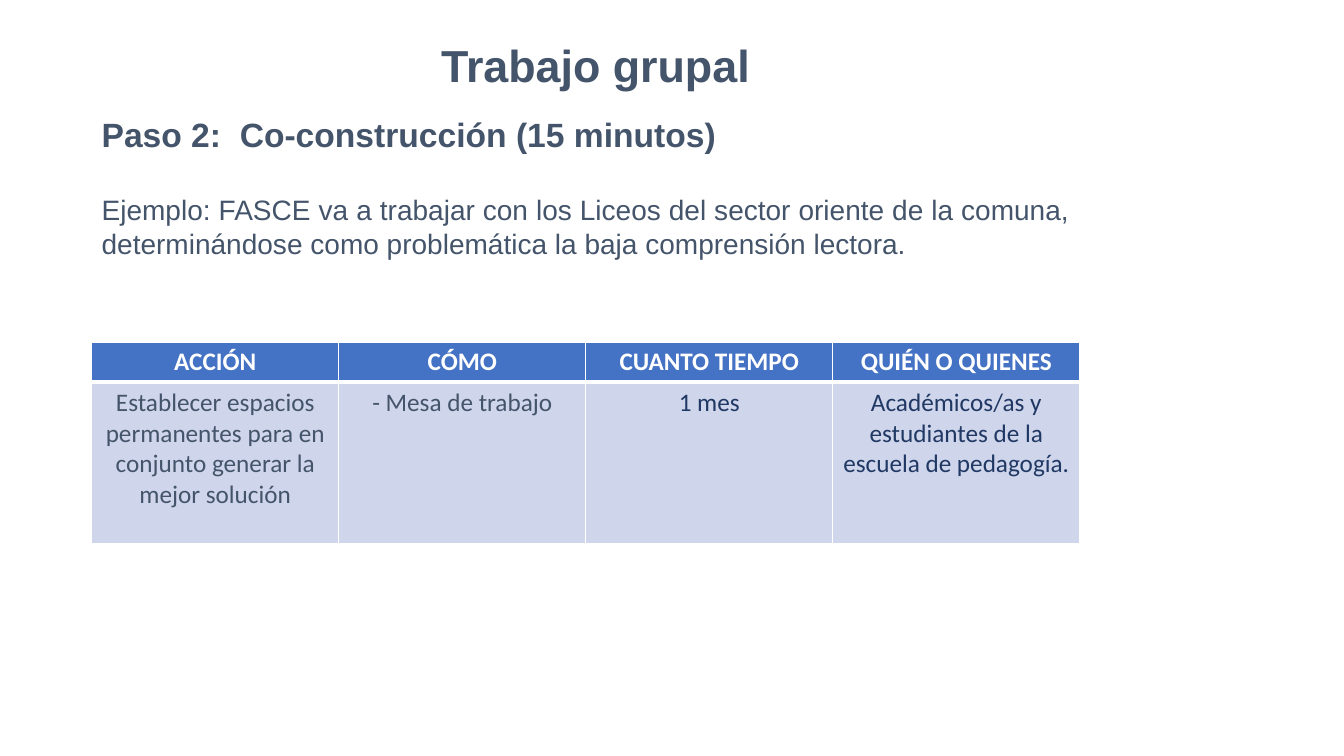
"""Build the group-work slide with its co-construction action table."""
from lxml import etree
from pptx import Presentation, util as u
from pptx.dml.color import RGBColor
from pptx.enum import text
from pptx.oxml import ns

HUES = {"slate": "44546A", "navy": "203864", "blue": "4472C4",
        "pale": "CFD5EA", "white": "FFFFFF"}
HEADS = ["ACCIÓN", "CÓMO", "CUANTO TIEMPO", "QUIÉN O QUIENES"]
PLAN = [("Establecer espacios permanentes para en conjunto generar la mejor solución", "slate"),
        ("- Mesa de trabajo", "slate"),
        ("1 mes", "navy"),
        ("Académicos/as y estudiantes de la escuela de pedagogía.", "navy")]


class Deck:
    """Hold the grid, the style and the current slide."""

    left, col, row = 0.91, 2.45, 0.4

    def __init__(self):
        self.prs = Presentation()
        self.prs.slide_width, self.prs.slide_height = u.Inches(13.33), u.Inches(7.5)
        self.slide = self.prs.slides.add_slide(self.prs.slide_layouts[5])

    def area(self, x, y, w, h):
        """Turn grid columns and rows into lengths."""
        return (u.Inches(self.left + x * self.col), u.Inches(y * self.row),
                u.Inches(w * self.col), u.Inches(h * self.row))

    def style(self, para, size, hue, face="Arial", bold=False):
        """Format every run of a paragraph."""
        for run in para.runs:
            font = run.font
            font.name, font.size, font.bold = face, u.Pt(size), bold
            font.color.rgb = RGBColor.from_string(HUES[hue])

    def title(self, words, *grid):
        """Place and format the title placeholder."""
        box = self.slide.shapes.title
        box.left, box.top, box.width, box.height = self.area(*grid)
        frame = box.text_frame
        frame.text = words
        frame.auto_size = text.MSO_AUTO_SIZE.NONE
        frame.vertical_anchor = text.MSO_ANCHOR.TOP
        para = frame.paragraphs[0]
        para.alignment = text.PP_ALIGN.CENTER
        self.style(para, 32, "slate", bold=True)

    def body(self, head, words, *grid):
        """Add a bold heading above a justified paragraph."""
        frame = self.slide.shapes.add_textbox(*self.area(*grid)).text_frame
        frame.word_wrap = True
        frame.text = head
        self.style(frame.paragraphs[0], 24, "slate", bold=True)
        para = frame.add_paragraph()
        para.text = words
        para.alignment = text.PP_ALIGN.JUSTIFY
        para.space_before = u.Pt(27.5)
        self.style(para, 20, "slate")

    def edges(self, cell, base):
        """Draw white cell borders with a chosen bottom width."""
        props = cell._tc.get_or_add_tcPr()
        for side, width in zip("LRTB", (1, 1, 1, base)):
            line = etree.SubElement(props, ns.qn(f"a:ln{side}"), w=str(u.Pt(width)))
            fill = etree.SubElement(line, ns.qn("a:solidFill"))
            etree.SubElement(fill, ns.qn("a:srgbClr"), val=HUES["white"])

    def cell(self, cell, words, hue, back, bold, base):
        """Fill and format one table cell."""
        self.edges(cell, base)
        cell.fill.solid()
        cell.fill.fore_color.rgb = RGBColor.from_string(HUES[back])
        cell.text_frame.text = words
        para = cell.text_frame.paragraphs[0]
        para.alignment = text.PP_ALIGN.CENTER
        self.style(para, 18, hue, "Calibri", bold)

    def table(self, heads, plan, *grid):
        """Add a header row and one row of plan entries."""
        table = self.slide.shapes.add_table(2, len(heads), *self.area(*grid)).table
        table.horz_banding = False
        table.rows[0].height = u.Inches(self.row)
        table.rows[1].height = u.Inches((grid[3] - 1) * self.row)
        for i, (head, (words, hue)) in enumerate(zip(heads, plan)):
            self.cell(table.cell(0, i), head, "white", "blue", True, 3)
            self.cell(table.cell(1, i), words, hue, "pale", False, 1)


def main():
    """Compose and save the slide."""
    deck = Deck()
    deck.title("Trabajo grupal", 1.31, 0.8, 1.46, 1.6)
    deck.body("Paso 2:  Co-construcción (15 minutos)",
              "Ejemplo: FASCE va a trabajar con los Liceos del sector oriente de la comuna, "
              "determinándose como problemática la baja comprensión lectora.",
              0, 2.7, 4, 3.95)
    deck.table(HEADS, PLAN, 0, 8.48, 4, 5)
    deck.prs.save("out.pptx")


if __name__ == "__main__":
    main()
